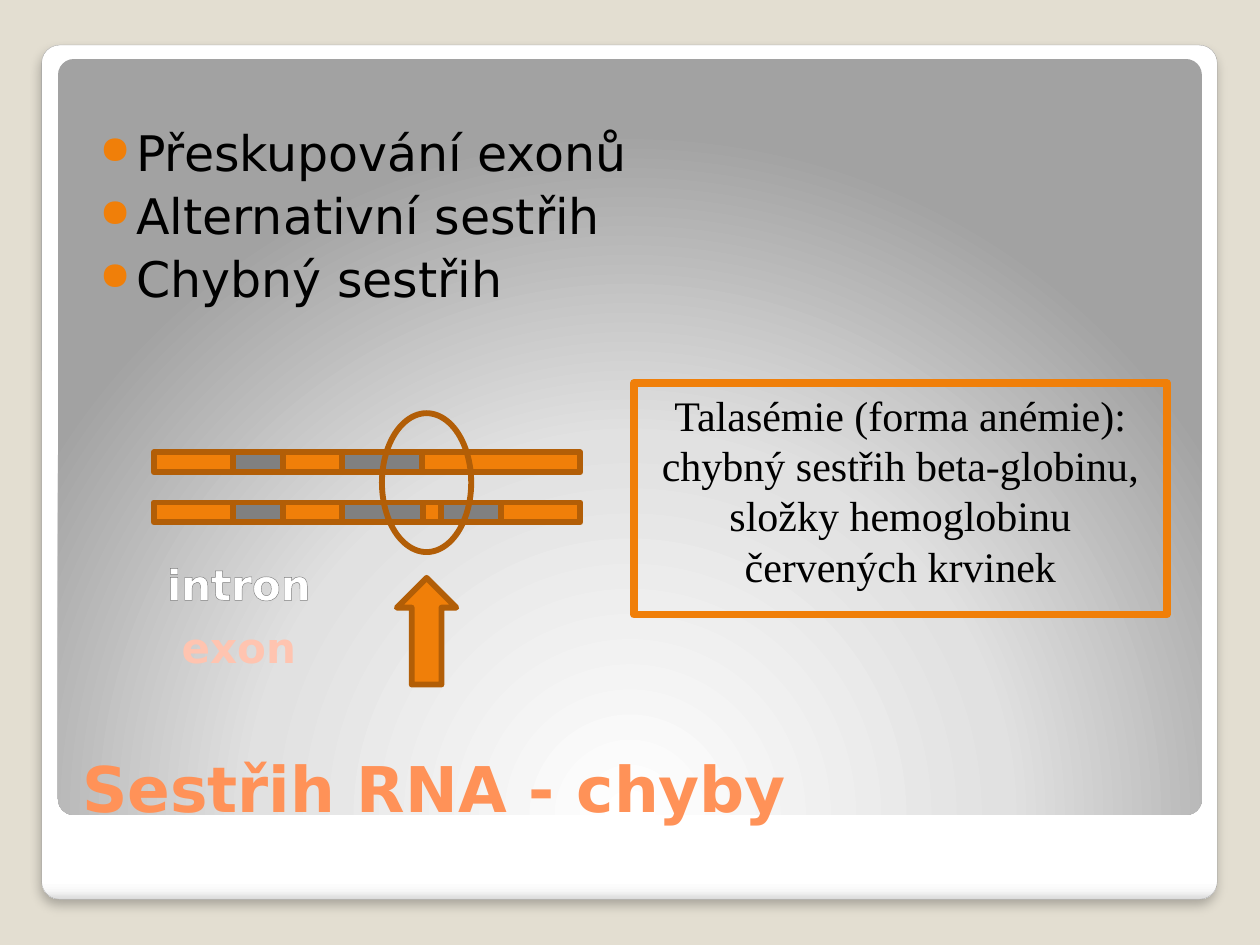
from lxml.etree import SubElement
from pptx import Presentation
from pptx.dml.color import RGBColor
from pptx.enum.shapes import MSO_SHAPE
from pptx.enum.text import MSO_ANCHOR, MSO_AUTO_SIZE, PP_ALIGN
from pptx.oxml import parse_xml
from pptx.oxml.ns import nsdecls, qn
from pptx.util import Cm, Pt

SAND = RGBColor(0xE3, 0xDE, 0xD1)
EDGE = RGBColor(0xA4, 0xA4, 0xA4)
ORANGE = RGBColor(0xF0, 0x7F, 0x09)
BROWN = RGBColor(0xB2, 0x5E, 0x07)
GRAY = RGBColor(0x80, 0x80, 0x80)
SALMON = RGBColor(0xFF, 0x92, 0x58)
PINK = RGBColor(0xFF, 0xC4, 0xB0)
WHITE = RGBColor(0xFF, 0xFF, 0xFF)
BLACK = RGBColor(0, 0, 0)
SANS, SERIF = "DejaVu Sans", "Times New Roman"

deck = Presentation()
deck.slide_width, deck.slide_height = Cm(25.4), Cm(19.05)
page = deck.slides.add_slide(deck.slide_layouts[5])
page.background.fill.solid()
page.background.fill.fore_color.rgb = SAND


def add_shape(kind, left, top, width, height, fill=None, line=None, weight=3.35):
    shape = page.shapes.add_shape(kind, Cm(left), Cm(top), Cm(width), Cm(height))
    shape.shadow.inherit = False
    if fill is None:
        shape.fill.background()
    else:
        shape.fill.solid()
        shape.fill.fore_color.rgb = fill
    if line is None:
        shape.line.fill.background()
    else:
        shape.line.color.rgb = line
        shape.line.width = Pt(weight)
    return shape


def set_font(paragraph, size, color, name=SANS, bold=False):
    font = paragraph.font
    font.size, font.name, font.bold = Pt(size), name, bold
    font.color.rgb = color


# Card and inner panel with gradient fills
card = add_shape(MSO_SHAPE.ROUNDED_RECTANGLE, 0.84, 0.91, 23.7, 17.22, line=EDGE, weight=0.16)
panel = add_shape(MSO_SHAPE.ROUNDED_RECTANGLE, 1.17, 1.19, 23.06, 15.24)
gradients = [
    (card, [(0, "FFFFFF"), (98, "FFFFFF"), (99, "F7F7F7"), (100, "DADADA")],
     '<a:lin ang="5400000" scaled="0"/>'),
    (panel, [(0, "FFFFFF"), (55, "E1E1E1"), (100, "A2A2A2")],
     '<a:path path="circle"><a:fillToRect l="50000" t="175000" r="50000" b="-75000"/></a:path>'),
]
for shape, stops, direction in gradients:
    shape.adjustments[0] = 0.021
    stop_xml = "".join(
        f'<a:gs pos="{position * 1000}"><a:srgbClr val="{color}"/></a:gs>'
        for position, color in stops)
    properties = shape.element.spPr
    properties.replace(properties.find(qn("a:noFill")), parse_xml(
        f'<a:gradFill {nsdecls("a")} rotWithShape="1"><a:gsLst>{stop_xml}</a:gsLst>'
        f'{direction}</a:gradFill>'))
card.element.spPr.find(qn("a:effectLst")).append(parse_xml(
    f'<a:outerShdw {nsdecls("a")} blurRad="76200" dist="50800" dir="5400000" rotWithShape="0">'
    '<a:srgbClr val="000000"><a:alpha val="25000"/></a:srgbClr></a:outerShdw>'))

# Bulleted list
body = page.shapes.add_textbox(Cm(1.5), Cm(2.34), Cm(21.26), Cm(8.81)).text_frame
body.word_wrap = True
body.margin_left = Cm(0.51)
body.text = "Přeskupování exonů\nAlternativní sestřih\nChybný sestřih"
for para in body.paragraphs:
    set_font(para, 28, BLACK)
    para.space_before = Pt(2.5)
    settings = para._p.get_or_add_pPr()
    settings.set("marL", str(Cm(0.74)))
    settings.set("indent", str(Cm(-0.74)))
    bullet_xml = [f'<a:buClr {nsdecls("a")}><a:srgbClr val="{ORANGE}"/></a:buClr>',
                  f'<a:buSzPct {nsdecls("a")} val="80000"/>',
                  f'<a:buChar {nsdecls("a")} char="●"/>']
    defaults = settings.find(qn("a:defRPr"))
    for xml in bullet_xml:
        defaults.addprevious(parse_xml(xml))

# Framed note
note = add_shape(MSO_SHAPE.RECTANGLE, 12.78, 7.72, 10.74, 4.67, line=ORANGE, weight=4.5).text_frame
note.word_wrap = True
note.vertical_anchor = MSO_ANCHOR.TOP
note.text = "Talasémie (forma anémie): chybný sestřih beta-globinu, složky hemoglobinu červených krvinek"
para = note.paragraphs[0]
para.alignment = PP_ALIGN.CENTER
para.space_before = Pt(4.8)
set_font(para, 24, BLACK, SERIF)

# Title, brought in front of the panel
title = page.shapes.title
page.shapes.element.append(title.element)
title.left, title.top, title.width, title.height = Cm(1.4), Cm(13.84), Cm(22.73), Cm(2.92)
title.text_frame.text = "Sestřih RNA - chyby"
title.text_frame.auto_size = MSO_AUTO_SIZE.NONE
title.text_frame.vertical_anchor = MSO_ANCHOR.BOTTOM
title.text_frame.paragraphs[0].alignment = PP_ALIGN.LEFT
set_font(title.text_frame.paragraphs[0], 36, SALMON, bold=True)

# Correct and faulty strands: exons and introns alternate between these edges
strands = [
    (9.12, [3.1, 4.7, 5.7, 6.9, 8.5, 11.7]),
    (10.13, [3.1, 4.7, 5.7, 6.9, 8.53, 8.9, 10.1, 11.7]),
]
for top, edges in strands:
    for index, (left, right) in enumerate(zip(edges, edges[1:])):
        add_shape(MSO_SHAPE.RECTANGLE, left, top, right - left, 0.4,
                  GRAY if index % 2 else ORANGE, BROWN)

# Legend
for text, top, color in [("intron", 11.13, WHITE), ("exon", 12.4, PINK)]:
    label = page.shapes.add_textbox(Cm(3.1), Cm(top), Cm(3.43), Cm(1.27)).text_frame
    label.word_wrap = False
    label.text = text
    para = label.paragraphs[0]
    para.alignment = PP_ALIGN.CENTER
    set_font(para, 24, color, bold=True)
    if text == "intron":
        outline = parse_xml(
            f'<a:ln {nsdecls("a")} w="{Pt(0.83)}"><a:solidFill>'
            '<a:srgbClr val="7D7D7D"/></a:solidFill></a:ln>')
        para.runs[0].font._element.insert(0, outline) if hasattr(
            para.runs[0].font, "_element") else para.runs[0]._r.get_or_add_rPr().insert(0, outline)

# Marker around the faulty splice site
add_shape(MSO_SHAPE.OVAL, 7.7, 8.33, 1.8, 2.8, line=BROWN)
add_shape(MSO_SHAPE.UP_ARROW, 8, 11.65, 1.2, 2.15, ORANGE, BROWN)

deck.save("out.pptx")
